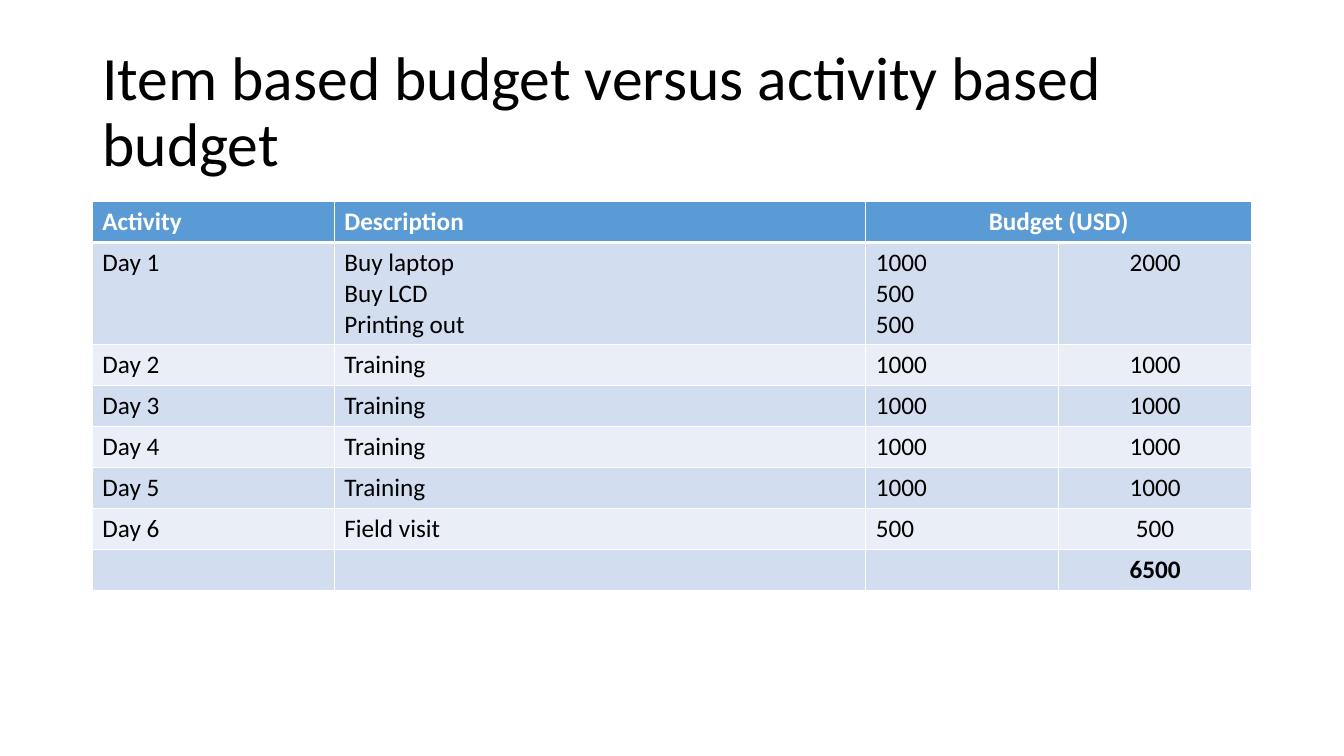
from dataclasses import dataclass

from lxml import etree
from pptx import Presentation
from pptx.dml.color import RGBColor
from pptx.enum import text
from pptx.oxml import ns
from pptx.util import Pt

FONT = "Calibri"
BLACK, WHITE = "000000", "FFFFFF"
HEADER_FILL = "5B9BD5"
BAND_FILLS = ("D2DEEF", "EAEFF7")
LEFT, WIDTH = 66, 828
TABLE_TOP = 144
COLUMN_WIDTHS = (172.8, 379.6, 137.8, 137.8)
ROW_HEIGHT, LINE_HEIGHT = 29.2, 21.6
CENTRED_COLUMN = 3


@dataclass(frozen=True)
class BudgetRow:
    activity: str = ""
    description: str = ""
    items: str = ""
    total: str = ""
    bold: bool = False

    @property
    def cells(self) -> tuple[str, ...]:
        return self.activity, self.description, self.items, self.total

    @property
    def height(self) -> float:
        return ROW_HEIGHT + LINE_HEIGHT * self.description.count("\n")


HEADER = BudgetRow("Activity", "Description", "Budget (USD)", bold=True)
ROWS = (
    HEADER,
    BudgetRow("Day 1", "Buy laptop\nBuy LCD\nPrinting out", "1000\n500\n500", "2000"),
    *(BudgetRow(f"Day {day}", "Training", "1000", "1000") for day in range(2, 6)),
    BudgetRow("Day 6", "Field visit", "500", "500"),
    BudgetRow(total="6500", bold=True),
)


def color(hex_code: str) -> RGBColor:
    return RGBColor.from_string(hex_code)


def set_borders(cell, bottom: float, top: float) -> None:
    """Draw white cell borders, 1 pt at the sides."""
    properties = cell._tc.get_or_add_tcPr()
    for side, width in (("L", 1), ("R", 1), ("T", top), ("B", bottom)):
        line = etree.SubElement(properties, ns.qn(f"a:ln{side}"), w=str(Pt(width)))
        fill = etree.SubElement(line, ns.qn("a:solidFill"))
        etree.SubElement(fill, ns.qn("a:srgbClr"), val=WHITE)


def format_font(font, size: float, hex_code: str, bold: bool = False) -> None:
    font.name = FONT
    font.size = Pt(size)
    font.bold = bold
    font.color.rgb = color(hex_code)


def add_title(slide, wording: str) -> None:
    title = slide.shapes.title
    title.left, title.top = Pt(LEFT), Pt(28.8)
    title.width, title.height = Pt(WIDTH), Pt(104.4)
    frame = title.text_frame
    frame.text = wording
    frame.word_wrap = True
    frame.auto_size = text.MSO_AUTO_SIZE.NONE
    frame.vertical_anchor = text.MSO_ANCHOR.MIDDLE
    paragraph = frame.paragraphs[0]
    paragraph.alignment = text.PP_ALIGN.LEFT
    paragraph.line_spacing = 0.9
    format_font(paragraph.font, 44, BLACK)


def fill_cell(cell, wording: str, row_index: int, centred: bool) -> None:
    is_header = row_index == 0
    set_borders(cell, bottom=3 if is_header else 1, top=3 if row_index == 1 else 1)
    cell.fill.solid()
    cell.fill.fore_color.rgb = color(
        HEADER_FILL if is_header else BAND_FILLS[(row_index - 1) % 2])
    cell.text = wording
    for paragraph in cell.text_frame.paragraphs:
        paragraph.alignment = text.PP_ALIGN.CENTER if centred else text.PP_ALIGN.LEFT
        format_font(paragraph.font, 18, WHITE if is_header else BLACK,
                    ROWS[row_index].bold)


def add_budget_table(slide) -> None:
    height = sum(row.height for row in ROWS)
    table = slide.shapes.add_table(
        len(ROWS), len(COLUMN_WIDTHS), Pt(LEFT), Pt(TABLE_TOP), Pt(WIDTH), Pt(height)
    ).table
    for column, width in zip(table.columns, COLUMN_WIDTHS):
        column.width = Pt(width)
    for row_index, row in enumerate(ROWS):
        table.rows[row_index].height = Pt(row.height)
        for column_index, wording in enumerate(row.cells):
            centred = column_index == CENTRED_COLUMN or wording == HEADER.items
            fill_cell(table.cell(row_index, column_index), wording, row_index, centred)
    table.cell(0, 2).merge(table.cell(0, 3))


def main() -> None:
    presentation = Presentation()
    presentation.slide_width, presentation.slide_height = Pt(960), Pt(540)
    slide = presentation.slides.add_slide(presentation.slide_layouts[5])
    add_title(slide, "Item based budget versus activity based budget")
    add_budget_table(slide)
    presentation.save("out.pptx")


if __name__ == "__main__":
    main()
